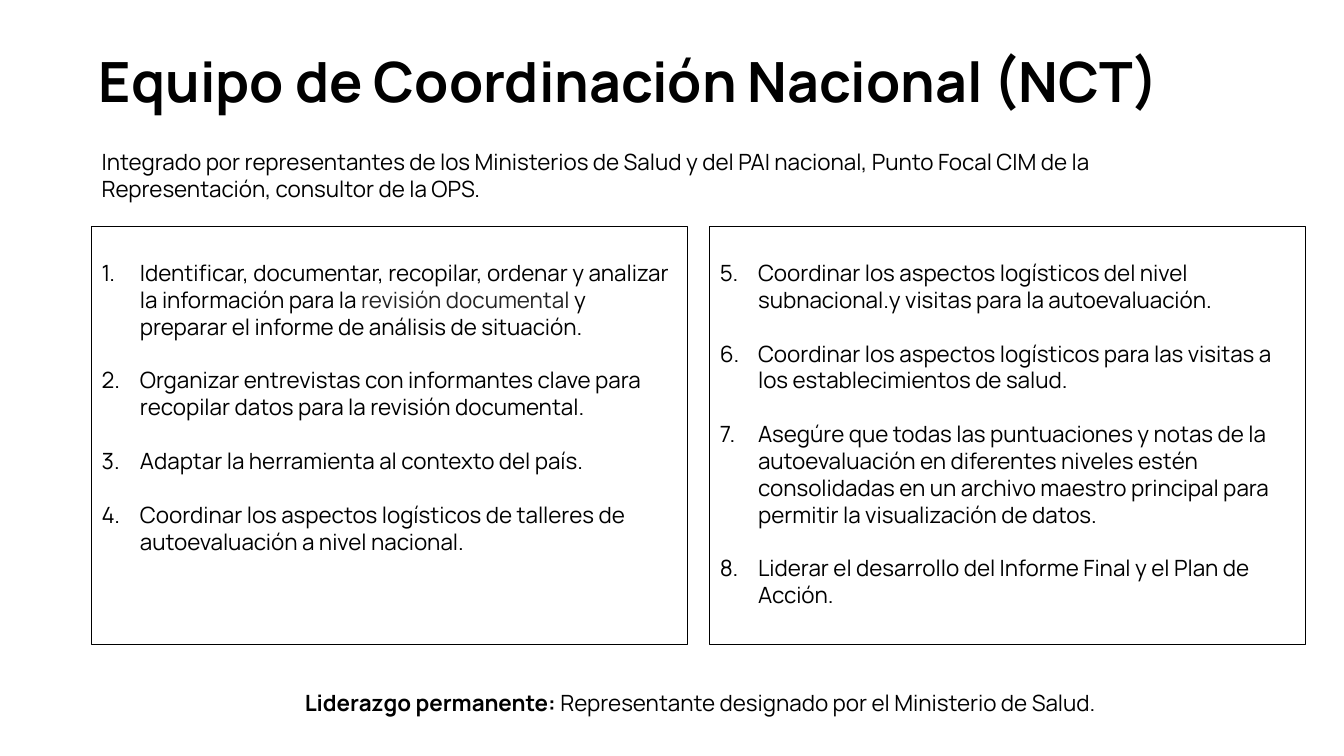
"""Builds the slide on the national coordination team and its eight tasks."""
import pptx
import pptx.dml.color
import pptx.enum.shapes
import pptx.enum.text
import pptx.oxml
import pptx.oxml.ns
import pptx.util

Inches, Pt = pptx.util.Inches, pptx.util.Pt
ANCHOR, ALIGN = pptx.enum.text.MSO_ANCHOR, pptx.enum.text.PP_ALIGN

HEADING = "Equipo de Coordinación Nacional (NCT)"
MEMBERS = ("Integrado por representantes de los Ministerios de Salud y del PAI nacional, "
           "Punto Focal CIM de la Representación, consultor de la OPS.")
TASK_COLUMNS = [
    [
        [("Identificar, documentar, recopilar, ordenar y analizar la información para la ", "body"),
         ("revisión documental ", "muted"),
         ("y preparar el informe de análisis de situación.", "body")],
        [("Organizar entrevistas con informantes clave para recopilar datos para la "
          "revisión documental.", "body")],
        [("Adaptar la herramienta al contexto del país.", "body")],
        [("Coordinar los aspectos logísticos de talleres de autoevaluación a nivel nacional.", "body")],
    ],
    [
        [("Coordinar los aspectos logísticos del nivel subnacional.y visitas para la "
          "autoevaluación.", "body")],
        [("Coordinar los aspectos logísticos para las visitas a los establecimientos de salud.", "body")],
        [("Asegúre que todas las puntuaciones y notas de la autoevaluación en diferentes "
          "niveles estén consolidadas en un archivo maestro principal para permitir la "
          "visualización de datos.", "body")],
        [("Liderar el desarrollo del Informe Final y el Plan de Acción.", "body")],
    ],
]
LEADERSHIP = [("Liderazgo permanente: ", "strong"),
              ("Representante designado por el Ministerio de Salud.", "body")]

INK = pptx.dml.color.RGBColor.from_string("000000")
THEME = {
    "font": "Manrope",
    "border": Pt(0.75),
    "task_gap": Pt(19.2),
    "styles": {
        "title": {"size": Pt(39.6), "bold": True, "color": INK},
        "body": {"size": Pt(16), "bold": False, "color": INK},
        "strong": {"size": Pt(16), "bold": True, "color": INK},
        "muted": {"size": Pt(16), "bold": False,
                  "color": pptx.dml.color.RGBColor.from_string("242424")},
    },
}
LEFT, TASKS_TOP = 0.91, 2.25
TASKS_WIDTH, TASKS_HEIGHT, COLUMN_STEP = 5.91, 4.14, 6.13
INDENT = Inches(0.38)
FRAME = {"word_wrap": True, "auto_size": pptx.enum.text.MSO_AUTO_SIZE.NONE,
         "vertical_anchor": ANCHOR.TOP}
LOWERED_FRAME = {**FRAME, "margin_top": Inches(0.32)}
TITLE_FRAME = {**FRAME, "vertical_anchor": ANCHOR.MIDDLE,
               "margin_left": Inches(0.07), "margin_right": Inches(0.07),
               "margin_top": Inches(0.04), "margin_bottom": Inches(0.04)}


def apply(target, values):
    """Set every named attribute on the target."""
    for name, value in values.items():
        setattr(target, name, value)


def place(part, left, top, width, height):
    """Put a slide part at a position given in inches."""
    apply(part, {"left": Inches(left), "top": Inches(top),
                 "width": Inches(width), "height": Inches(height)})


def write(paragraph, pieces, align=ALIGN.LEFT):
    """Fill a paragraph with styled pieces of text."""
    paragraph.alignment = align
    for words, style in pieces:
        run = paragraph.add_run()
        run.text = words
        values = dict(THEME["styles"][style])
        run.font.color.rgb = values.pop("color")
        apply(run.font, {"name": THEME["font"], **values})


def number(paragraph, start):
    """Give a paragraph a hanging automatic number."""
    properties = paragraph._p.get_or_add_pPr()
    properties.set("marL", str(INDENT))
    properties.set("indent", str(-INDENT))
    namespace = pptx.oxml.ns.nsdecls("a")
    for element in (f'<a:buFont {namespace} typeface="{THEME["font"]}"/>',
                    f'<a:buAutoNum {namespace} type="arabicPeriod" startAt="{start}"/>'):
        properties.append(pptx.oxml.parse_xml(element))


def add_text(slide, box, pieces, frame_values, align=ALIGN.LEFT):
    """Add a one-paragraph text box."""
    frame = slide.shapes.add_textbox(*map(Inches, box)).text_frame
    apply(frame, frame_values)
    write(frame.paragraphs[0], pieces, align)


def add_tasks(slide, left, tasks, start):
    """Add a bordered panel of numbered tasks."""
    panel = slide.shapes.add_shape(
        pptx.enum.shapes.MSO_SHAPE.RECTANGLE,
        *map(Inches, (left, TASKS_TOP, TASKS_WIDTH, TASKS_HEIGHT)))
    panel.shadow.inherit = False
    panel.fill.background()
    panel.line.color.rgb = INK
    panel.line.width = THEME["border"]
    frame = panel.text_frame
    apply(frame, LOWERED_FRAME)
    for index, task in enumerate(tasks):
        paragraph = frame.add_paragraph() if index else frame.paragraphs[0]
        if index:
            paragraph.space_before = THEME["task_gap"]
        number(paragraph, start)
        write(paragraph, task)


def main():
    """Build and save the slide."""
    deck = pptx.Presentation()
    apply(deck, {"slide_width": Inches(13.33), "slide_height": Inches(7.5)})
    slide = deck.slides.add_slide(deck.slide_layouts.get_by_name("Title Only"))

    title = slide.shapes.title
    place(title, LEFT, 0.26, 12.27, 1.16)
    apply(title.text_frame, TITLE_FRAME)
    heading = title.text_frame.paragraphs[0]
    heading.line_spacing = 0.9
    write(heading, [(HEADING, "title")])

    add_text(slide, (LEFT, 1.42, 11.4, 0.64), [(MEMBERS, "body")], FRAME)
    start = 1
    for column, tasks in enumerate(TASK_COLUMNS):
        add_tasks(slide, LEFT + column * COLUMN_STEP, tasks, start)
        start += len(tasks)
    add_text(slide, (2.54, 6.52, 8.81, 0.91), LEADERSHIP, LOWERED_FRAME, ALIGN.CENTER)
    deck.save("out.pptx")


if __name__ == "__main__":
    main()
